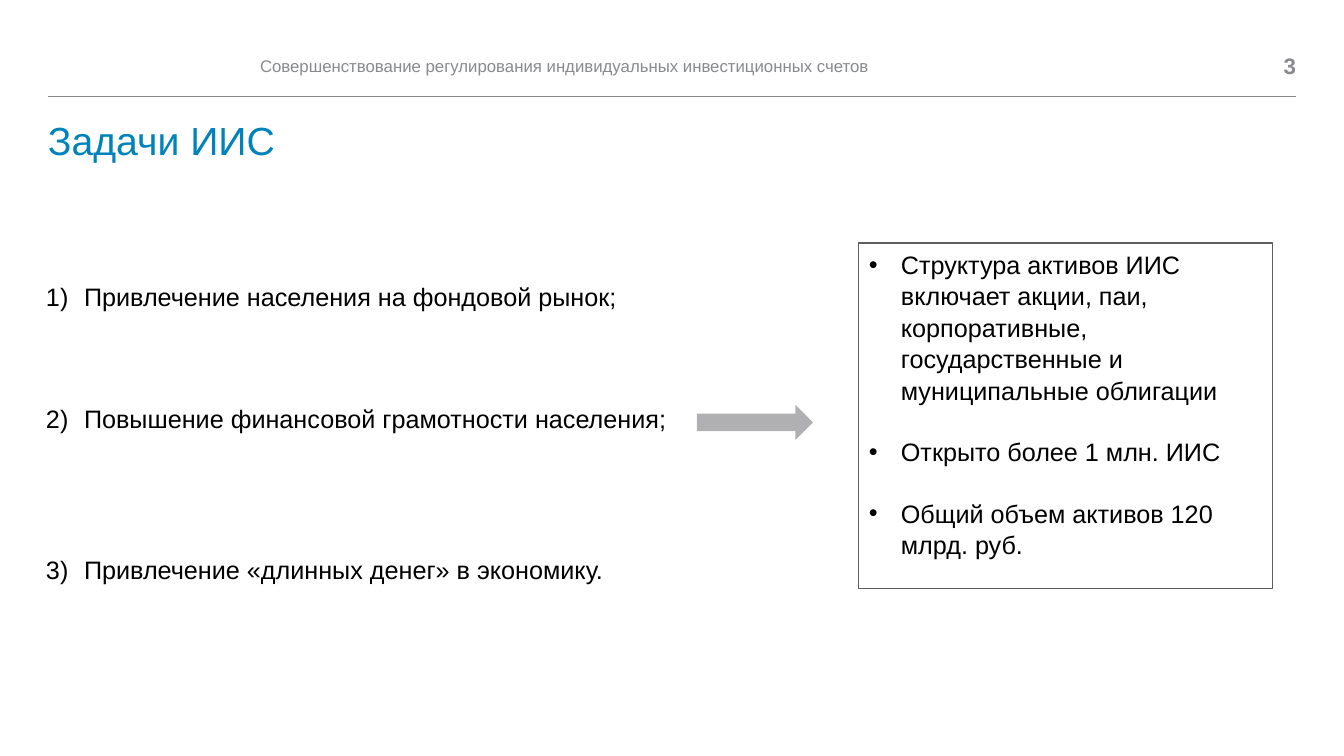
from lxml import etree
from pptx import Presentation
from pptx.dml.color import RGBColor
from pptx.enum.shapes import MSO_CONNECTOR, MSO_SHAPE
from pptx.enum.text import MSO_ANCHOR, PP_ALIGN
from pptx.oxml.ns import qn
from pptx.util import Emu, Pt

STRAIGHT = MSO_CONNECTOR.STRAIGHT
RECTANGLE = MSO_SHAPE.RECTANGLE
RIGHT_ARROW = MSO_SHAPE.RIGHT_ARROW
TOP = MSO_ANCHOR.TOP
MIDDLE = MSO_ANCHOR.MIDDLE
LEFT = PP_ALIGN.LEFT
RIGHT = PP_ALIGN.RIGHT

EMU_PER_PX = 914400 / 100.8
FONT = "Arial"
LINE_PITCH = 21.5
COLORS = {
    "title": "0082BB",
    "header": "888A8D",
    "body": "000000",
    "arrow": "B0B0B3",
    "frame": "5F5F5F",
}

TASKS = [
    ("Привлечение населения на фондовой рынок;", 0),
    ("Повышение финансовой грамотности населения;", 3),
    ("Привлечение «длинных денег» в экономику.", 4),
]
RESULTS = [
    ("Структура активов ИИС включает акции, паи, корпоративные, "
     "государственные и муниципальные облигации", 0),
    ("Открыто более 1 млн. ИИС", 1),
    ("Общий объем активов 120 млрд. руб.", 1),
]


def px(value):
    return Emu(round(value * EMU_PER_PX))


def color(name):
    return RGBColor.from_string(COLORS[name])


def set_frame(frame, inset_x, inset_y, anchor):
    frame.word_wrap = True
    frame.margin_left = frame.margin_right = px(inset_x)
    frame.margin_top = frame.margin_bottom = px(inset_y)
    frame.vertical_anchor = anchor


def add_run(paragraph, text, size, color_name, bold=False):
    run = paragraph.add_run()
    run.text = text
    run.font.name = FONT
    run.font.size = Pt(size)
    run.font.bold = bold
    run.font.color.rgb = color(color_name)


def add_label(slide, box, text, size, color_name, anchor=MIDDLE,
              align=LEFT, bold=False, spacing=1.0):
    frame = slide.shapes.add_textbox(*map(px, box)).text_frame
    set_frame(frame, 0, 0, anchor)
    paragraph = frame.paragraphs[0]
    paragraph.alignment = align
    paragraph.line_spacing = spacing
    add_run(paragraph, text, size, color_name, bold)


def add_marker(paragraph, indent, tag, **attributes):
    properties = paragraph._p.get_or_add_pPr()
    properties.set("marL", str(px(indent)))
    properties.set("indent", str(-px(indent)))
    marker_font = etree.SubElement(properties, qn("a:buFont"))
    marker_font.set("typeface", FONT)
    etree.SubElement(properties, qn(tag), **attributes)


def fill_list(frame, items, indent, tag, **attributes):
    set_frame(frame, 10, 5, TOP)
    for index, (text, lines_above) in enumerate(items):
        paragraph = frame.add_paragraph() if index else frame.paragraphs[0]
        add_marker(paragraph, indent, tag, **attributes)
        paragraph.alignment = LEFT
        paragraph.line_spacing = 1.04
        if lines_above:
            paragraph.space_before = Pt(lines_above * LINE_PITCH)
        add_run(paragraph, text, 18, "body")


def add_rule(slide, left, right, y):
    rule = slide.shapes.add_connector(STRAIGHT, px(left), px(y), px(right), px(y))
    rule.line.color.rgb = color("header")
    rule.line.width = Pt(0.5)
    etree.SubElement(rule._element.spPr, qn("a:effectLst"))


def add_results_frame(slide, box):
    results = slide.shapes.add_shape(RECTANGLE, *map(px, box))
    results.shadow.inherit = False
    results.fill.background()
    results.line.color.rgb = color("frame")
    results.line.width = Pt(0.75)
    return results.text_frame


def add_arrow(slide, box):
    arrow = slide.shapes.add_shape(RIGHT_ARROW, *map(px, box))
    arrow.shadow.inherit = False
    arrow.fill.solid()
    arrow.fill.fore_color.rgb = color("arrow")
    arrow.line.fill.background()


def main():
    deck = Presentation()
    deck.slide_width, deck.slide_height = px(1344), px(756)
    slide = deck.slides.add_slide(deck.slide_layouts[6])

    add_rule(slide, 48, 1296, 96)
    add_label(slide, (48, 122, 1248, 67), "Задачи ИИС", 28, "title",
              anchor=TOP, spacing=0.9)
    add_label(slide, (260, 48, 930, 35),
              "Совершенствование регулирования индивидуальных инвестиционных счетов",
              12, "header")
    add_label(slide, (1214, 48, 82, 35), "3", 16, "header",
              align=RIGHT, bold=True)

    tasks = slide.shapes.add_textbox(px(36), px(275), px(667), px(316))
    fill_list(tasks.text_frame, TASKS, 38, "a:buAutoNum", type="arabicParenR")
    results = add_results_frame(slide, (859, 243, 414, 346))
    fill_list(results, RESULTS, 32, "a:buChar", char="•")
    add_arrow(slide, (697, 405, 116, 35))

    deck.save("out.pptx")


if __name__ == "__main__":
    main()
